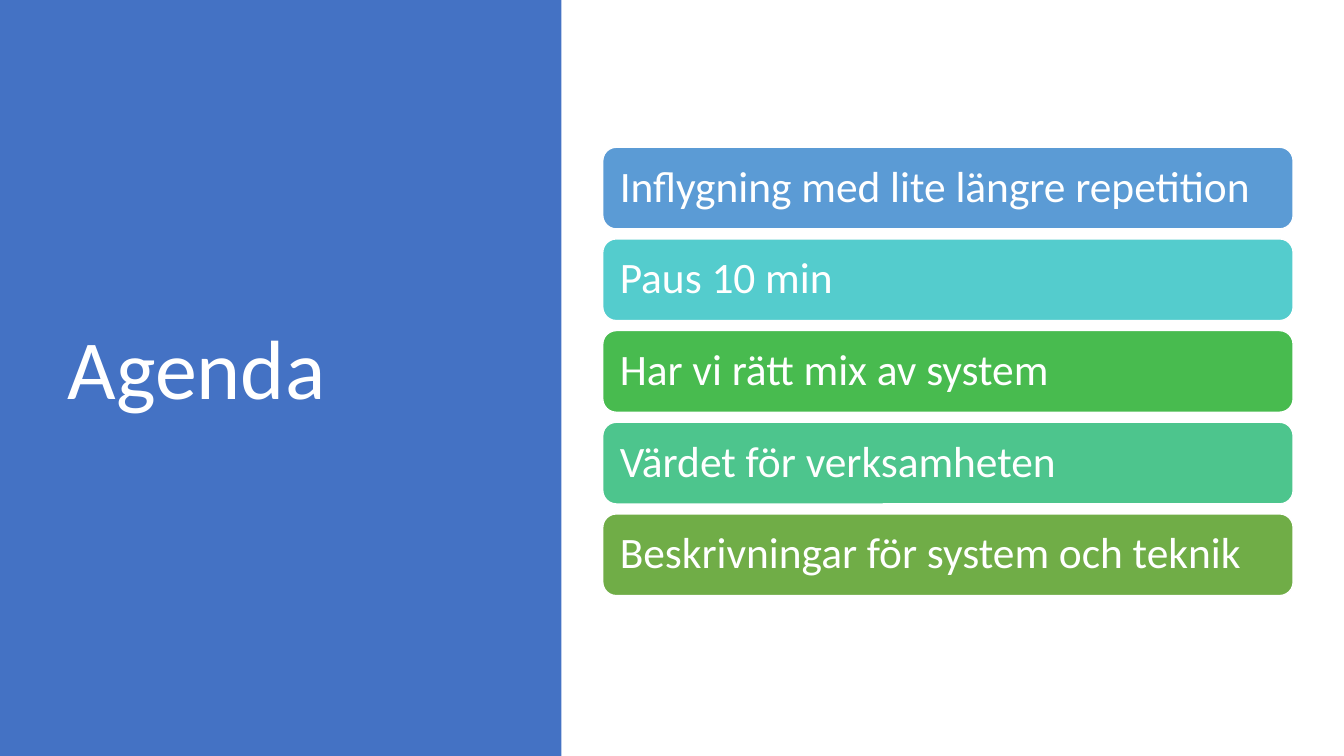
from pptx import Presentation
from pptx import util as u
from pptx.dml.color import RGBColor
from pptx.enum import shapes, text

COLORS = {"panel": "4472C4", "white": "FFFFFF"}
AGENDA = [
    ("Inflygning med lite längre repetition", "5B9BD5"),
    ("Paus 10 min", "54CCCD"),
    ("Har vi rätt mix av system", "48BB4F"),
    ("Värdet för verksamheten", "4DC58D"),
    ("Beskrivningar för system och teknik", "70AD47"),
]
SLIDE_W, SLIDE_H = 33.87, 19.05


def add_block(s, kind, box, color):
    """Add a filled shape without shadow or line; box is in centimetres."""
    sp = s.shapes.add_shape(kind, *map(u.Cm, box))
    sp.shadow.inherit = False
    sp.fill.solid()
    sp.fill.fore_color.rgb = RGBColor.from_string(color)
    sp.line.fill.background()
    return sp


def write(sp, words, size):
    """Set one line of white text, left-aligned and vertically centred."""
    tf = sp.text_frame
    tf.text = words
    tf.word_wrap = True
    tf.auto_size = text.MSO_AUTO_SIZE.NONE
    tf.vertical_anchor = text.MSO_ANCHOR.MIDDLE
    p = tf.paragraphs[0]
    p.alignment = text.PP_ALIGN.LEFT
    p.line_spacing = 0.9
    font = p.runs[0].font
    font.name, font.size = "Calibri", u.Pt(size)
    font.color.rgb = RGBColor.from_string(COLORS["white"])


def title_panel(s, box):
    left, top, width, height = box
    panel = add_block(s, shapes.MSO_SHAPE.RECTANGLE, box, COLORS["panel"])
    title = s.shapes.title
    title.element.addprevious(panel.element)
    title.left, title.top = u.Cm(left + 1.45), u.Cm(top + 1.73)
    title.width, title.height = u.Cm(width - 3.58), u.Cm(height - 3.76)
    write(title, "Agenda", 60)


def agenda_bars(s, box, gap=0.25):
    left, top, width, height = box
    bar_h = (height + gap) / len(AGENDA) - gap
    for i, (words, color) in enumerate(AGENDA):
        bar_box = (left, top + i * (bar_h + gap), width, bar_h)
        bar = add_block(s, shapes.MSO_SHAPE.ROUNDED_RECTANGLE, bar_box, color)
        bar.line.color.rgb = RGBColor.from_string(COLORS["white"])
        bar.line.width = u.Pt(1)
        tf = bar.text_frame
        tf.margin_left = tf.margin_right = u.Cm(0.33)
        write(bar, words, 31)


def main():
    prs = Presentation()
    prs.slide_width, prs.slide_height = u.Cm(SLIDE_W), u.Cm(SLIDE_H)
    s = prs.slides.add_slide(prs.slide_layouts[5])
    title_panel(s, (0, 0, 14.15, SLIDE_H))
    agenda_bars(s, (15.19, 3.71, 17.4, 11.3))
    prs.save("out.pptx")


if __name__ == "__main__":
    main()
